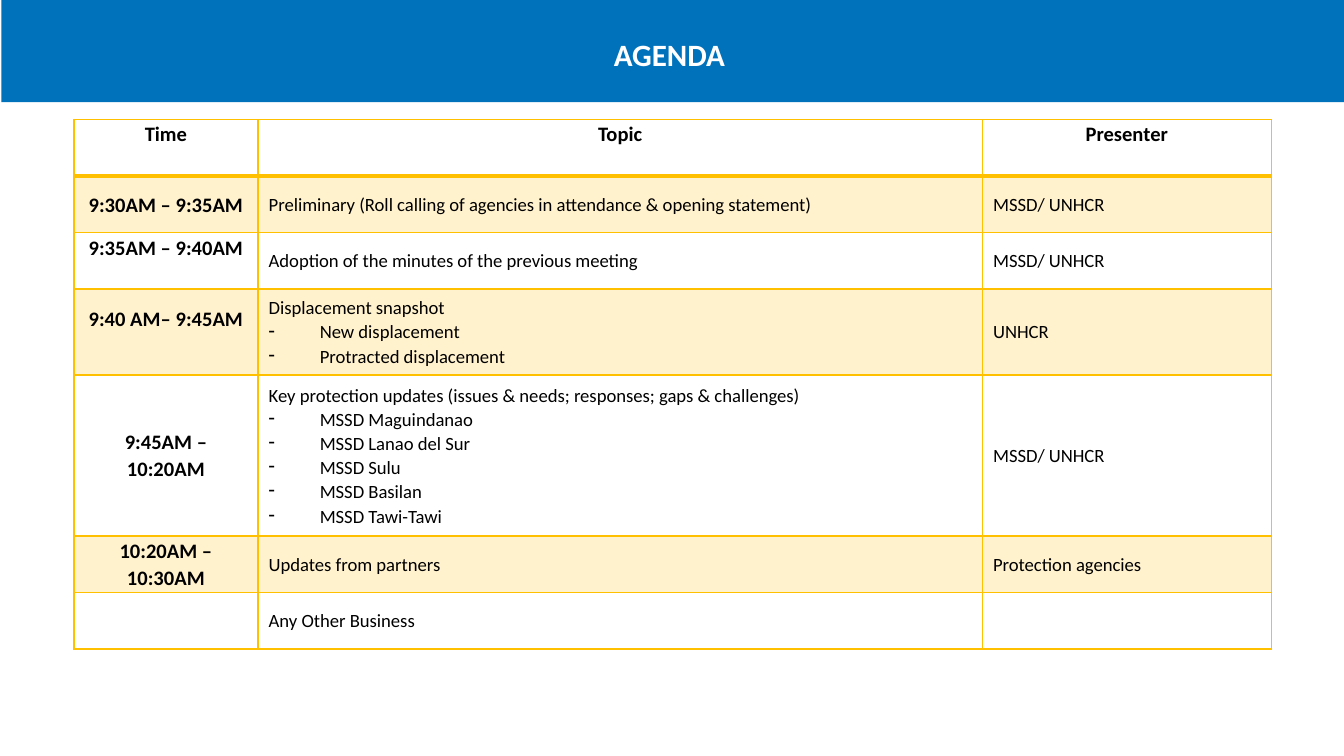
from dataclasses import dataclass

from lxml import etree
from pptx import Presentation
from pptx import util as u
from pptx.dml.color import RGBColor
from pptx.enum import text
from pptx.oxml import ns


@dataclass(frozen=True)
class Theme:
    face: str = "Calibri"
    blue: str = "0072BC"
    gold: str = "FFC000"
    white: str = "FFFFFF"
    black: str = "000000"
    title: float = 16.6
    head: float = 11
    body: float = 10
    tint: int = 20


THEME = Theme()
WIDTHS = (1.37, 5.39, 2.15)
HEIGHTS = (0.42, 0.42, 0.42, 0.64, 1.2, 0.42, 0.42)
HEADS = ("Time", "Topic", "Presenter")
ROWS = (
    ("9:30AM – 9:35AM",
     ["Preliminary (Roll calling of agencies in attendance & opening statement)"],
     "MSSD/ UNHCR"),
    ("9:35AM – 9:40AM",
     ["Adoption of the minutes of the previous meeting"],
     "MSSD/ UNHCR"),
    ("9:40 AM– 9:45AM",
     ["Displacement snapshot", "New displacement", "Protracted displacement"],
     "UNHCR"),
    ("9:45AM – 10:20AM",
     ["Key protection updates (issues & needs; responses; gaps & challenges)",
      "MSSD Maguindanao", "MSSD Lanao del Sur", "MSSD Sulu", "MSSD Basilan",
      "MSSD Tawi-Tawi"],
     "MSSD/ UNHCR"),
    ("10:20AM – 10:30AM", ["Updates from partners"], "Protection agencies"),
    ("", ["Any Other Business"], ""),
)
RAISED = (2, 3)


def set_font(item, size, color, bold):
    font = item.font
    font.name = THEME.face
    font.size = u.Pt(size)
    font.bold = bold
    font.color.rgb = RGBColor.from_string(color)


def add_dash(par):
    props = par._p.get_or_add_pPr()
    props.set("marL", str(u.Inches(0.38)))
    props.set("indent", str(u.Inches(-0.38)))
    etree.SubElement(props, ns.qn("a:buChar"), char="-")


def add_edge(cell, side, width):
    props = cell._tc.get_or_add_tcPr()
    line = etree.SubElement(props, ns.qn(f"a:ln{side}"), w=str(u.Pt(width)))
    fill = etree.SubElement(line, ns.qn("a:solidFill"))
    etree.SubElement(fill, ns.qn("a:srgbClr"), val=THEME.gold)


def style_cell(cell, row):
    for side in "LRTB":
        thick = (row, side) in ((0, "B"), (1, "T"))
        add_edge(cell, side, 2 if thick else 1)
    if row % 2 == 0:
        cell.fill.background()
        return
    cell.fill.solid()
    cell.fill.fore_color.rgb = RGBColor.from_string(THEME.gold)
    color = cell._tc.tcPr.find(ns.qn("a:solidFill")).find(ns.qn("a:srgbClr"))
    etree.SubElement(color, ns.qn("a:alpha"), val=str(THEME.tint * 1000))


def fill_cell(cell, lines, row, col):
    style_cell(cell, row)
    strong = row == 0 or col == 0
    anchor = text.MSO_ANCHOR
    cell.vertical_anchor = anchor.TOP if row == 0 else anchor.MIDDLE
    cell.margin_left = cell.margin_right = u.Inches(0.05 if row == 0 else 0.08)
    cell.margin_top = 0
    cell.margin_bottom = u.Inches(0.2 if col == 0 and row in RAISED else 0)
    frame = cell.text_frame
    frame.text = "\n".join(lines)
    for num, par in enumerate(frame.paragraphs):
        par.alignment = text.PP_ALIGN.CENTER if strong else text.PP_ALIGN.LEFT
        par.line_spacing = 1.07
        if num:
            add_dash(par)
        item = par.runs[0] if num else par
        set_font(item, THEME.head if strong else THEME.body, THEME.black, strong)


def add_title(slide, label):
    bar = slide.shapes.title
    bar.left, bar.top = u.Inches(0.01), 0
    bar.width, bar.height = u.Inches(10), u.Inches(0.76)
    bar.fill.solid()
    bar.fill.fore_color.rgb = RGBColor.from_string(THEME.blue)
    frame = bar.text_frame
    frame.text = label
    frame.vertical_anchor = text.MSO_ANCHOR.MIDDLE
    frame.margin_left = frame.margin_bottom = 0
    frame.margin_top = u.Inches(0.04)
    frame.margin_right = u.Inches(0.06)
    par = frame.paragraphs[0]
    par.alignment = text.PP_ALIGN.CENTER
    set_font(par, THEME.title, THEME.white, True)


def add_agenda(slide):
    table = slide.shapes.add_table(
        len(HEIGHTS), len(WIDTHS), u.Inches(0.55), u.Inches(0.89),
        u.Inches(sum(WIDTHS)), u.Inches(sum(HEIGHTS))).table
    table.first_row = table.horz_banding = False
    for column, width in zip(table.columns, WIDTHS):
        column.width = u.Inches(width)
    for line, height in zip(table.rows, HEIGHTS):
        line.height = u.Inches(height)
    for row, items in enumerate((HEADS, *ROWS)):
        for col, item in enumerate(items):
            lines = [item] if isinstance(item, str) else item
            fill_cell(table.cell(row, col), lines, row, col)


def main():
    deck = Presentation()
    deck.slide_width = u.Inches(10)
    deck.slide_height = deck.slide_width * 9 // 16
    slide = deck.slides.add_slide(deck.slide_layouts[5])
    add_title(slide, "AGENDA")
    add_agenda(slide)
    deck.save("out.pptx")


if __name__ == "__main__":
    main()
